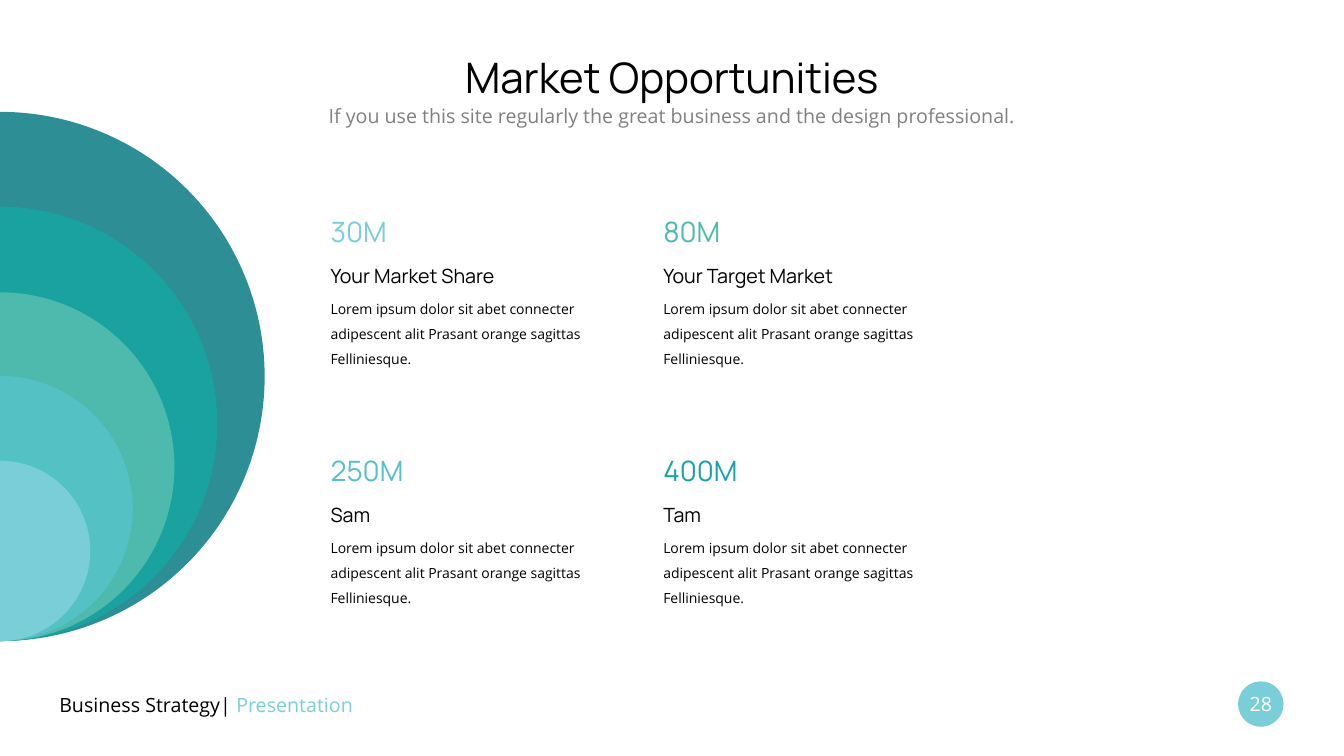
from pptx import Presentation
from pptx.dml.color import RGBColor
from pptx.enum.shapes import MSO_SHAPE
from pptx.enum.text import MSO_ANCHOR, PP_ALIGN
from pptx.util import Inches, Pt

OVAL = MSO_SHAPE.OVAL
LEFT, CENTER = PP_ALIGN.LEFT, PP_ALIGN.CENTER
TOP, MIDDLE = MSO_ANCHOR.TOP, MSO_ANCHOR.MIDDLE

BLACK = RGBColor(0x00, 0x00, 0x00)
WHITE = RGBColor(0xFF, 0xFF, 0xFF)
GRAY = RGBColor(0x80, 0x80, 0x80)
DEEP = RGBColor(0x2D, 0x8E, 0x95)
TEAL = RGBColor(0x1A, 0xA2, 0xA0)
GREEN = RGBColor(0x4E, 0xBA, 0xAD)
AQUA = RGBColor(0x54, 0xC1, 0xC4)
SKY = RGBColor(0x7A, 0xCE, 0xD8)

HEAD, BODY = "Manrope", "Open Sans"
BASE = 6.36
RINGS = [(5.25, DEEP), (4.31, TEAL), (3.46, GREEN), (2.63, AQUA), (1.79, SKY)]
COLS, ROWS = (3.18, 6.48), (2.08, 4.45)
LOREM = ("Lorem ipsum dolor sit abet connecter adipescent alit "
         "Prasant orange sagittas Felliniesque.")
MARKETS = [
    ("30M", "Your Market Share", SKY),
    ("80M", "Your Target Market", GREEN),
    ("250M", "Sam", AQUA),
    ("400M", "Tam", TEAL),
]


def write(para, text, size=14, font=BODY, color=BLACK, align=LEFT, line=None):
    para.alignment = align
    if line:
        para.line_spacing = Pt(line)
    run = para.add_run()
    run.text = text
    run.font.size = Pt(size)
    run.font.name = font
    run.font.bold = False
    run.font.color.rgb = color


class Page:
    def __init__(self, deck):
        self.slide = deck.slides.add_slide(deck.slide_layouts[5])
        fill = self.slide.background.fill
        fill.solid()
        fill.fore_color.rgb = WHITE

    def title(self, text, x, y, w, h):
        shape = self.slide.shapes.title
        shape.left, shape.top = Inches(x), Inches(y)
        shape.width, shape.height = Inches(w), Inches(h)
        frame = shape.text_frame
        frame.vertical_anchor = MIDDLE
        write(frame.paragraphs[0], text, size=30, font=HEAD, align=CENTER)

    def disc(self, x, y, size, color):
        shape = self.slide.shapes.add_shape(
            OVAL, Inches(x), Inches(y), Inches(size), Inches(size))
        shape.shadow.inherit = False
        shape.fill.solid()
        shape.fill.fore_color.rgb = color
        shape.line.fill.background()

    def text(self, text, x, y, w, h, anchor=TOP, **form):
        box = self.slide.shapes.add_textbox(
            Inches(x), Inches(y), Inches(w), Inches(h))
        frame = box.text_frame
        frame.word_wrap = True
        frame.vertical_anchor = anchor
        para = frame.paragraphs[0]
        write(para, text, **form)
        return para

    def market(self, x, y, total, name, color):
        self.text(total, x, y, 2.88, 0.44, size=20, font=HEAD, color=color)
        self.text(name, x, y + 0.49, 2.88, 0.34, font=HEAD)
        self.text(LOREM, x, y + 0.77, 2.88, 0.83, size=10, line=18)


def main():
    deck = Presentation()
    deck.slide_width, deck.slide_height = Inches(13.33), Inches(7.5)
    page = Page(deck)

    page.title("Market Opportunities", 0.49, 0.43, 12.35, 0.66)
    page.text("If you use this site regularly the great business and "
              "the design professional.",
              0.49, 0.98, 12.35, 0.34, color=GRAY, align=CENTER)

    for size, color in RINGS:
        page.disc(-size / 2, BASE - size, size, color)

    for i, (total, name, color) in enumerate(MARKETS):
        page.market(COLS[i % 2], ROWS[i // 2], total, name, color)

    foot = page.text("Business Strategy| ", 0.49, 6.79, 3.5, 0.4, anchor=MIDDLE)
    write(foot, "Presentation", color=SKY)
    page.disc(12.28, 6.76, 0.45, SKY)
    page.text("28", 12.21, 6.87, 0.59, 0.22,
              anchor=MIDDLE, color=WHITE, align=CENTER)

    deck.save("out.pptx")


if __name__ == "__main__":
    main()
